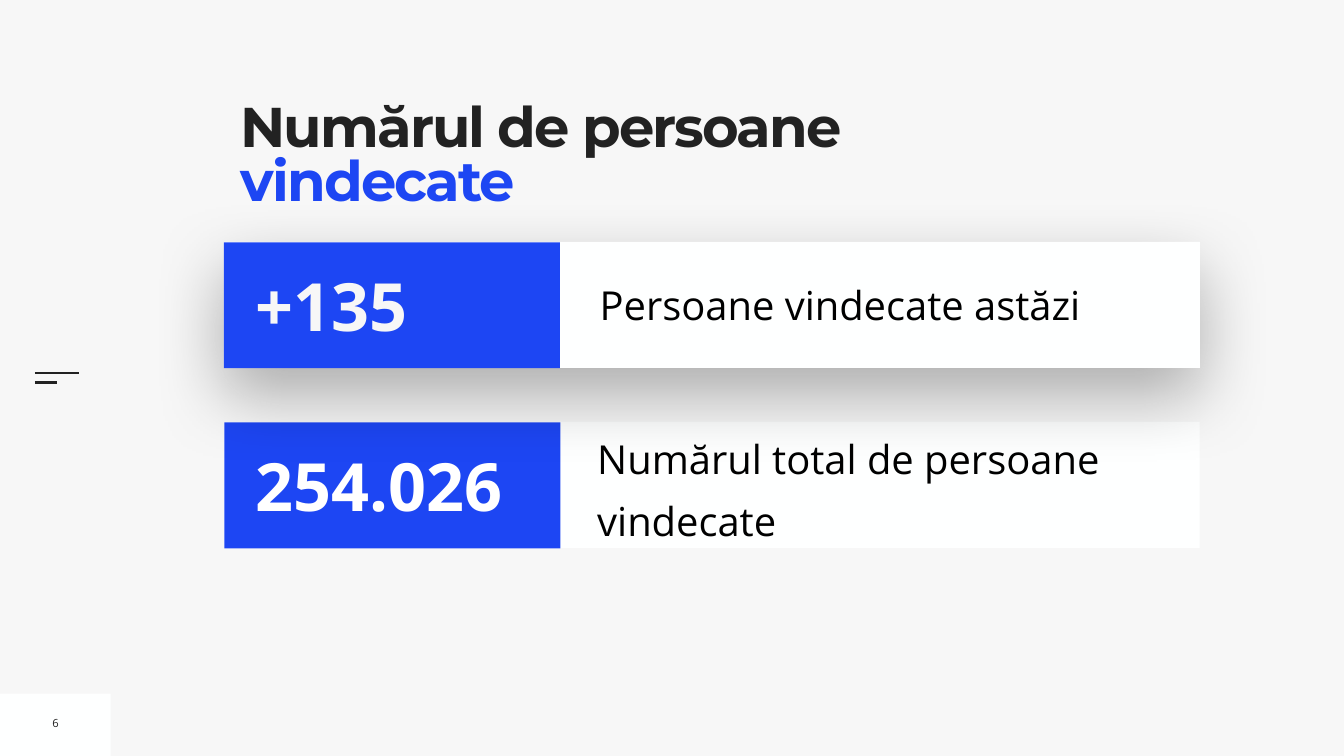
from dataclasses import dataclass

from lxml import etree
from pptx import Presentation
from pptx.dml.color import RGBColor
from pptx.enum.shapes import MSO_CONNECTOR, MSO_SHAPE
from pptx.enum.text import MSO_ANCHOR, PP_ALIGN
from pptx.oxml.ns import qn
from pptx.util import Pt

RECT = MSO_SHAPE.RECTANGLE
LINE = MSO_CONNECTOR.STRAIGHT
TOP, MID = MSO_ANCHOR.TOP, MSO_ANCHOR.MIDDLE
LEFT, CENTER = PP_ALIGN.LEFT, PP_ALIGN.CENTER


@dataclass(frozen=True)
class Theme:
    back: str = "F7F7F7"
    white: str = "FEFFFF"
    pure: str = "FFFFFF"
    blue: str = "1D46F3"
    dark: str = "222222"
    black: str = "000000"
    head: str = "Montserrat"
    body: str = "Open Sans"
    title: int = 80
    figure: int = 95
    label: int = 57
    page: int = 16


class Deck:
    def __init__(self, theme, width, height):
        self.theme = theme
        self.prs = Presentation()
        self.prs.slide_width, self.prs.slide_height = Pt(width), Pt(height)
        self.slide = self.prs.slides.add_slide(self.prs.slide_layouts[6])
        fill = self.slide.background.fill
        fill.solid()
        fill.fore_color.rgb = RGBColor.from_string(theme.back)

    def rect(self, x, y, w, h, color):
        shape = self.slide.shapes.add_shape(RECT, Pt(x), Pt(y), Pt(w), Pt(h))
        shape.shadow.inherit = False
        shape.fill.solid()
        shape.fill.fore_color.rgb = RGBColor.from_string(color)
        shape.line.fill.background()
        return shape

    def shade(self, shape, blur, drop, alpha):
        effects = shape._element.spPr.find(qn("a:effectLst"))
        outer = etree.SubElement(
            effects, qn("a:outerShdw"), blurRad=str(Pt(blur)),
            dist=str(Pt(drop)), dir="5400000", rotWithShape="0")
        color = etree.SubElement(outer, qn("a:srgbClr"), val=self.theme.black)
        etree.SubElement(color, qn("a:alpha"), val=str(alpha * 1000))

    def rule(self, x, y, w):
        line = self.slide.shapes.add_connector(LINE, Pt(x), Pt(y), Pt(x + w), Pt(y))
        line.line.color.rgb = RGBColor.from_string(self.theme.dark)
        line.line.width = Pt(3)
        etree.SubElement(line._element.spPr, qn("a:effectLst"))

    def text(self, x, y, w, h, runs, size, font=None, bold=False, inset=0,
             anchor=MID, align=LEFT, wrap=True, lead=1.0, before=0, track=0):
        box = self.slide.shapes.add_textbox(Pt(x), Pt(y), Pt(w), Pt(h))
        frame = box.text_frame
        frame.word_wrap = wrap
        frame.vertical_anchor = anchor
        frame.margin_left = frame.margin_right = Pt(inset)
        frame.margin_top = frame.margin_bottom = Pt(inset)
        para = frame.paragraphs[0]
        para.alignment = align
        para.line_spacing = lead
        para.space_before = Pt(before)
        for words, color in runs:
            run = para.add_run()
            run.text = words
            run.font.name = font or self.theme.body
            run.font.size = Pt(size)
            run.font.bold = bold
            run.font.color.rgb = RGBColor.from_string(color)
            if track:
                run.font._element.set("spc", str(round(track * 100)))

    def card(self, x, y, w, figure, tint, raised=False):
        back = self.rect(x, y, w, 180, self.theme.white)
        if raised:
            self.shade(back, blur=100, drop=40, alpha=30)
        self.rect(x, y + 0.5, 480, 180, self.theme.blue)
        self.text(x + 38, y + 25.5, 434, 130, [(figure, tint)],
                  self.theme.figure, bold=True, inset=7.2)

    def save(self):
        self.prs.save("out.pptx")


def main():
    theme = Theme()
    deck = Deck(theme, 1920, 1080)

    deck.rect(0, 991, 158, 89, theme.white)
    deck.rule(50, 533.5, 63)
    deck.rule(50, 546.5, 31.5)
    deck.text(67, 1014.5, 24.5, 36.5, [("6", theme.dark)], theme.page,
              inset=7.2, align=CENTER, wrap=False)

    deck.text(343.5, 149, 937, 196.5,
              [("Numărul de persoane ", theme.dark), ("vindecate", theme.blue)],
              theme.title, font=theme.head, bold=True, anchor=TOP,
              lead=0.8, track=-2.7)

    deck.card(320.4, 602.8, 1393.2, "254.026", theme.pure)
    deck.text(853.2, 604, 860.4, 170,
              [("Numărul total de persoane vindecate", theme.black)],
              theme.label, lead=1.3, before=20)

    deck.card(319.7, 345.6, 1394.6, "+135", theme.back, raised=True)
    deck.text(849.6, 393.8, 846.7, 83.5,
              [("Persoane vindecate astăzi", theme.black)],
              theme.label, inset=7.2)

    deck.save()


if __name__ == "__main__":
    main()
